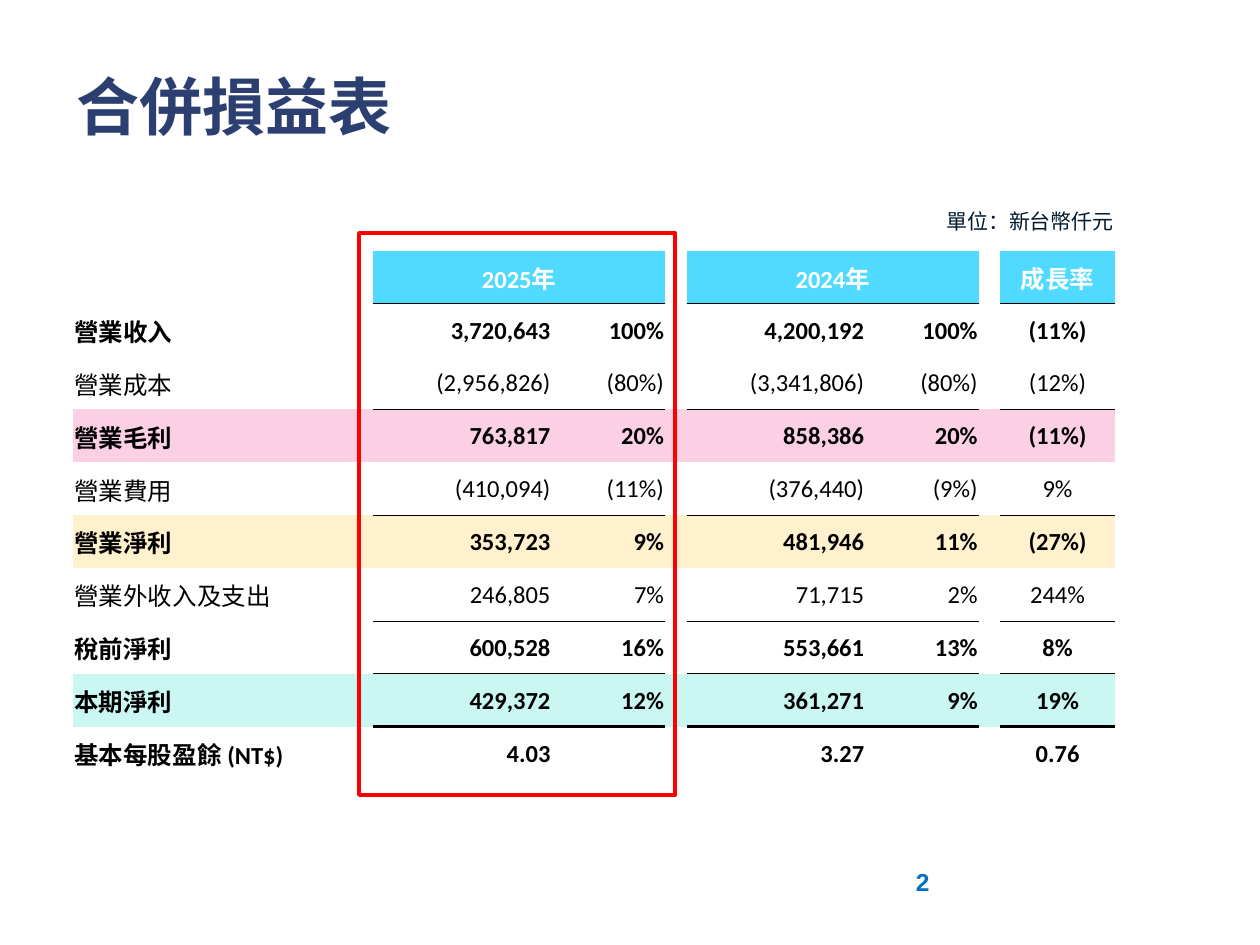
from lxml import etree
from pptx import Presentation
from pptx.dml.color import RGBColor
from pptx.enum.shapes import MSO_SHAPE
from pptx.enum.text import MSO_ANCHOR, PP_ALIGN
from pptx.oxml.ns import qn
from pptx.util import Inches, Pt

LEFT, CENTER, RIGHT = PP_ALIGN.LEFT, PP_ALIGN.CENTER, PP_ALIGN.RIGHT
TOP, MIDDLE = MSO_ANCHOR.TOP, MSO_ANCHOR.MIDDLE
RECTANGLE = MSO_SHAPE.RECTANGLE

NAVY = RGBColor(0x2C, 0x3F, 0x71)
INK = RGBColor(0x00, 0x19, 0x2F)
BLUE = RGBColor(0x00, 0x70, 0xC0)
SKY = RGBColor(0x51, 0xDA, 0xFF)
PINK = RGBColor(0xFB, 0xD0, 0xE4)
CREAM = RGBColor(0xFF, 0xF1, 0xCE)
MINT = RGBColor(0xCA, 0xF7, 0xF1)
RED = RGBColor(0xFF, 0x00, 0x00)
BLACK = RGBColor(0x00, 0x00, 0x00)
WHITE = RGBColor(0xFF, 0xFF, 0xFF)

TEXTS = [
    ("合併損益表", (0.51, 0.21, 8.58, 1.25), 36, NAVY, True, LEFT, MIDDLE),
    ("2", (7.17, 6.83, 2.33, 0.52), 14, BLUE, True, LEFT, TOP),
    ("單位：新台幣仟元", (6.65, 1.61, 2.29, 0.3), 12, INK, False, RIGHT, TOP),
]

# values, bold, fill, weight of the rule below
ROWS = [
    (("", "2025年", "", "2024年", "", "成長率"), True, SKY, 1),
    (("營業收入", "3,720,643", "100%", "4,200,192", "100%", "(11%)"), True, None, 0),
    (("營業成本", "(2,956,826)", "(80%)", "(3,341,806)", "(80%)", "(12%)"), False, None, 0.5),
    (("營業毛利", "763,817", "20%", "858,386", "20%", "(11%)"), True, PINK, 0),
    (("營業費用", "(410,094)", "(11%)", "(376,440)", "(9%)", "9%"), False, None, 0.5),
    (("營業淨利", "353,723", "9%", "481,946", "11%", "(27%)"), True, CREAM, 0),
    (("營業外收入及支出", "246,805", "7%", "71,715", "2%", "244%"), False, None, 0.5),
    (("稅前淨利", "600,528", "16%", "553,661", "13%", "8%"), True, None, 0.5),
    (("本期淨利", "429,372", "12%", "361,271", "9%", "19%"), True, MINT, 2),
    (("基本每股盈餘 (NT$)", "4.03", "", "3.27", "", "0.76"), True, None, 0),
]
COL_WIDTHS = [2.38, 1.42, 0.9, 0.17, 1.42, 0.9, 0.17, 0.91]
VALUE_COLS = [0, 1, 2, 4, 5, 7]
RULED_COLS = VALUE_COLS[1:]
YEAR_COLS = [1, 4]
ROW_HEIGHT = 0.42


def add_run(p, text, size, font, color, bold):
    r = p.add_run()
    r.text = text
    r.font.size = Pt(size)
    r.font.name = font
    r.font.color.rgb = color
    r.font.bold = bold


def add_text(s, text, box, size, color, bold, align, anchor):
    tf = s.shapes.add_textbox(*map(Inches, box)).text_frame
    tf.word_wrap = True
    tf.vertical_anchor = anchor
    p = tf.paragraphs[0]
    p.alignment = align
    add_run(p, text, size, "Arial", color, bold)


def set_borders(cell, top, bottom):
    tcPr = cell._tc.get_or_add_tcPr()
    for side, weight in (("L", 0), ("R", 0), ("T", top), ("B", bottom)):
        ln = etree.SubElement(tcPr, qn(f"a:ln{side}"), w=str(Pt(weight)))
        if weight:
            fill = etree.SubElement(ln, qn("a:solidFill"))
            etree.SubElement(fill, qn("a:srgbClr"), val=str(BLACK))
        else:
            etree.SubElement(ln, qn("a:noFill"))


def add_table(s):
    size = map(Inches, (0.58, 1.99, sum(COL_WIDTHS), ROW_HEIGHT * len(ROWS)))
    table = s.shapes.add_table(len(ROWS), len(COL_WIDTHS), *size).table
    table.horz_banding = False
    table.first_row = False
    for column, width in zip(table.columns, COL_WIDTHS):
        column.width = Inches(width)
    above = 0
    for i, (values, bold, band, below) in enumerate(ROWS):
        table.rows[i].height = Inches(ROW_HEIGHT)
        header = i == 0
        by_col = dict(zip(VALUE_COLS, values))
        for j in range(len(COL_WIDTHS)):
            cell = table.cell(i, j)
            ruled = j in RULED_COLS
            set_borders(cell, above if ruled else 0, below if ruled else 0)
            if band is not None and (ruled or not header):
                cell.fill.solid()
                cell.fill.fore_color.rgb = band
            else:
                cell.fill.background()
            cell.margin_left = cell.margin_right = cell.margin_top = Inches(0.01)
            cell.margin_bottom = 0
            cell.vertical_anchor = MIDDLE
            text = by_col.get(j)
            if text:
                p = cell.text_frame.paragraphs[0]
                if header or j == RULED_COLS[-1]:
                    p.alignment = CENTER
                else:
                    p.alignment = RIGHT if ruled else LEFT
                add_run(p, text, 14, "Calibri", WHITE if header else BLACK, bold)
        above = below
    for j in YEAR_COLS:
        table.cell(0, j).merge(table.cell(0, j + 1))


def add_highlight(s):
    sp = s.shapes.add_shape(RECTANGLE, *map(Inches, (2.85, 1.85, 2.51, 4.46)))
    sp.shadow.inherit = False
    sp.fill.background()
    sp.line.color.rgb = RED
    sp.line.width = Pt(2.25)


def main():
    prs = Presentation()
    prs.slide_width, prs.slide_height = Inches(10), Inches(7.5)
    s = prs.slides.add_slide(prs.slide_layouts[6])
    for item in TEXTS:
        add_text(s, *item)
    add_table(s)
    add_highlight(s)
    prs.save("out.pptx")


if __name__ == "__main__":
    main()
